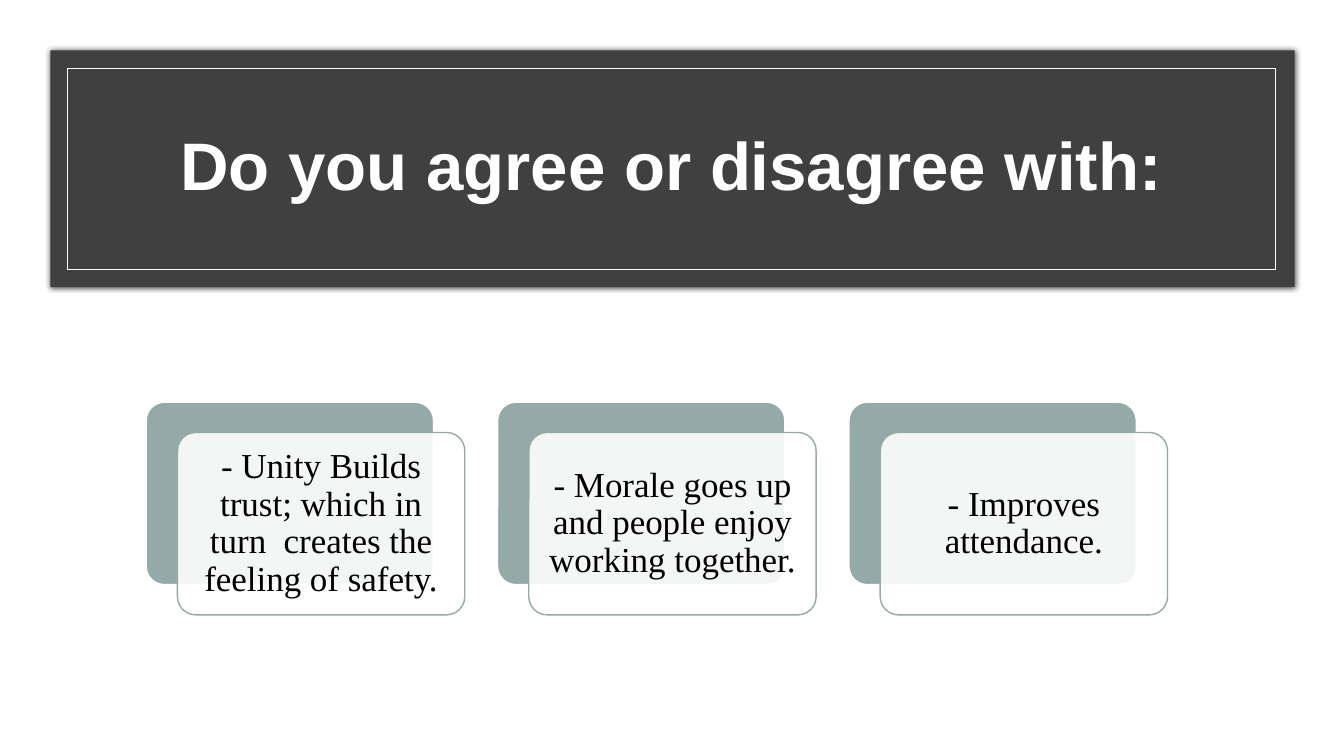
"""Build the slide asking whether the audience agrees with three benefits of unity."""
from lxml.etree import SubElement
from pptx import Presentation
from pptx.dml.color import RGBColor
from pptx.enum.shapes import MSO_SHAPE
from pptx.enum.text import MSO_ANCHOR, PP_ALIGN
from pptx.oxml import parse_xml
from pptx.oxml.ns import nsdecls, qn
from pptx.util import Inches, Pt

WHITE = RGBColor(0xFF, 0xFF, 0xFF)
BLACK = RGBColor(0x00, 0x00, 0x00)
CHARCOAL = RGBColor(0x40, 0x40, 0x40)
SAGE = RGBColor(0x96, 0xA9, 0xA9)

STATEMENTS = [
    "- Unity Builds trust; which in turn  creates the feeling of safety.",
    "- Morale goes up and people enjoy working together.",
    "- Improves attendance.",
]
CARD_LEFT, CARD_TOP = 1.45, 3.99
CARD_WIDTH, CARD_HEIGHT = 2.85, 1.81
CARD_PITCH = 3.485
FRONT_SHIFT_X, FRONT_SHIFT_Y = 0.31, 0.3


def add_panel(kind, left, top, width, height, fill=None, line=None, line_width=1):
    panel = slide.shapes.add_shape(kind, Inches(left), Inches(top), Inches(width), Inches(height))
    panel.shadow.inherit = False
    if fill is None:
        panel.fill.background()
    else:
        panel.fill.solid()
        panel.fill.fore_color.rgb = fill
    if line is None:
        panel.line.fill.background()
    else:
        panel.line.color.rgb = line
        panel.line.width = Pt(line_width)
    if kind == MSO_SHAPE.ROUNDED_RECTANGLE:
        panel.adjustments[0] = 0.1
    return panel


def write_text(shape, text, font, size, color, bold=False, inset=0.1, space_after=0):
    frame = shape.text_frame
    frame.word_wrap = True
    frame.vertical_anchor = MSO_ANCHOR.MIDDLE
    frame.margin_left = frame.margin_right = Inches(inset)
    frame.margin_top = frame.margin_bottom = Inches(inset)
    paragraph = frame.paragraphs[0]
    paragraph.alignment = PP_ALIGN.CENTER
    paragraph.line_spacing = 0.9
    paragraph.space_after = Pt(space_after)
    run = paragraph.add_run()
    run.text = text
    run.font.name = font
    run.font.size = Pt(size)
    run.font.bold = bold
    run.font.color.rgb = color


prs = Presentation()
prs.slide_width, prs.slide_height = Inches(13.33), Inches(7.5)
slide = prs.slides.add_slide(prs.slide_layouts[6])
slide.background.fill.solid()
slide.background.fill.fore_color.rgb = WHITE

banner = add_panel(MSO_SHAPE.RECTANGLE, 0.5, 0.5, 12.34, 2.35, fill=CHARCOAL)
banner_effects = banner._element.spPr.find(qn("a:effectLst"))
banner_effects.append(parse_xml(
    f'<a:outerShdw {nsdecls("a")} blurRad="{Pt(4)}" dist="0" dir="0" algn="ctr" rotWithShape="0">'
    '<a:srgbClr val="000000"><a:alpha val="66000"/></a:srgbClr></a:outerShdw>'
))
add_panel(MSO_SHAPE.RECTANGLE, 0.67, 0.68, 11.98, 1.99, line=WHITE, line_width=0.5)
question = slide.shapes.add_textbox(Inches(1.16), Inches(0.92), Inches(11), Inches(1.5))
write_text(question, "Do you agree or disagree with:", font="Arial", size=48, color=WHITE, bold=True)

for index, statement in enumerate(STATEMENTS):
    left = CARD_LEFT + index * CARD_PITCH
    add_panel(MSO_SHAPE.ROUNDED_RECTANGLE, left, CARD_TOP, CARD_WIDTH, CARD_HEIGHT,
              fill=SAGE, line=WHITE)
    card = add_panel(MSO_SHAPE.ROUNDED_RECTANGLE, left + FRONT_SHIFT_X, CARD_TOP + FRONT_SHIFT_Y,
                     CARD_WIDTH, CARD_HEIGHT, fill=WHITE, line=SAGE)
    card_color = card._element.spPr.find(qn("a:solidFill")).find(qn("a:srgbClr"))
    SubElement(card_color, qn("a:alpha"), val="90000")
    write_text(card, statement, font="Times New Roman", size=25, color=BLACK, space_after=8.75)

prs.save("out.pptx")
